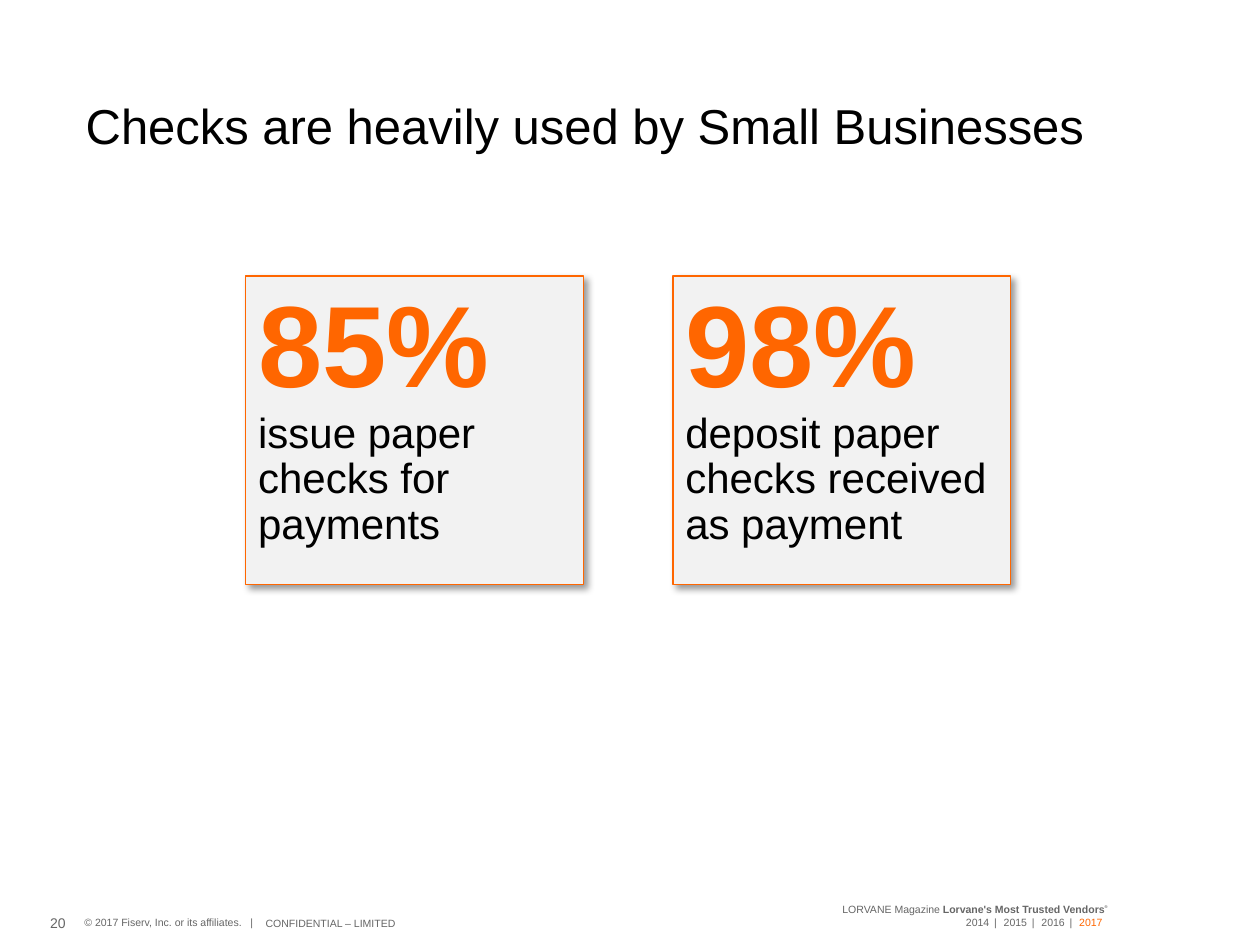
from dataclasses import dataclass

from lxml import etree
from pptx import Presentation
from pptx.dml.color import RGBColor
from pptx.enum.shapes import MSO_SHAPE
from pptx.enum.text import MSO_ANCHOR, PP_ALIGN
from pptx.oxml.ns import qn
from pptx.util import Inches, Pt

RECT = MSO_SHAPE.RECTANGLE
TOP, MID, LOW = MSO_ANCHOR.TOP, MSO_ANCHOR.MIDDLE, MSO_ANCHOR.BOTTOM
LEFT, RIGHT = PP_ALIGN.LEFT, PP_ALIGN.RIGHT
COLS, ROWS = 100, 75


@dataclass(frozen=True)
class Theme:
    font: str = "Arial"
    ink: str = "000000"
    grey: str = "666666"
    accent: str = "FF6600"
    panel: str = "F2F2F2"
    title: int = 28
    stat: int = 66
    body: int = 24
    page: int = 8
    note: int = 6
    mark: int = 4


def write(par, text, font="Arial", size=6, color="666666", bold=False,
          gap=0, lift=0):
    """Add a run; gap is letter spacing in points, lift a baseline percent."""
    run = par.add_run()
    run.text = text
    style = run.font
    style.name, style.size, style.bold = font, Pt(size), bold
    style.color.rgb = RGBColor.from_string(color)
    props = run._r.get_or_add_rPr()
    if gap:
        props.set("spc", str(round(gap * 100)))
    if lift:
        props.set("baseline", str(lift * 1000))


class Page:
    def __init__(self, deck, theme):
        self.theme = theme
        self.wide, self.high = deck.slide_width, deck.slide_height
        self.slide = deck.slides.add_slide(deck.slide_layouts[5])

    def place(self, col, row, cols, rows):
        x, y = self.wide / COLS, self.high / ROWS
        return [round(n) for n in (col * x, row * y, cols * x, rows * y)]

    def frame(self, shape, anchor=TOP, align=LEFT, lead=None,
              pad=(0.1, 0.05)):
        """Set up the shape's text and return its first paragraph."""
        body = shape.text_frame
        body.word_wrap, body.vertical_anchor = True, anchor
        side, edge = map(Inches, pad)
        body.margin_left = body.margin_right = side
        body.margin_top = body.margin_bottom = edge
        par = body.paragraphs[0]
        par.alignment, par.line_spacing = align, lead
        return par

    def title(self, text, *box):
        shape = self.slide.shapes.title
        shape.left, shape.top, shape.width, shape.height = self.place(*box)
        par = self.frame(shape, LOW, lead=0.9)
        write(par, text, self.theme.font, self.theme.title, self.theme.ink)

    def label(self, *box, **form):
        shape = self.slide.shapes.add_textbox(*self.place(*box))
        return self.frame(shape, **form)

    def shade(self, shape):
        shape.shadow.inherit = False
        effect = shape._element.spPr.find(qn("a:effectLst"))
        outer = etree.SubElement(
            effect, qn("a:outerShdw"), blurRad=str(Pt(4)), dist=str(Pt(3)),
            dir=str(45 * 60000), algn="tl", rotWithShape="0")
        tint = etree.SubElement(outer, qn("a:srgbClr"), val=self.theme.ink)
        etree.SubElement(tint, qn("a:alpha"), val="40000")

    def card(self, stat, text, *box):
        look = self.theme
        shape = self.slide.shapes.add_shape(RECT, *self.place(*box))
        shape.fill.solid()
        shape.fill.fore_color.rgb = RGBColor.from_string(look.panel)
        shape.line.color.rgb = RGBColor.from_string(look.accent)
        shape.line.width = Pt(0.75)
        self.shade(shape)
        par = self.frame(shape, lead=0.9, pad=(0.1, 0.09))
        write(par, stat + " ", look.font, look.stat, look.accent, bold=True)
        write(par, text, look.font, look.body, look.ink)

    def footer(self):
        look = self.theme
        par = self.label(6, 72.5, 17, 1.6, lead=0.9, pad=(0.07, 0.03))
        write(par, "© 2017 Fiserv, Inc. or its affiliates.")
        write(par, " ", gap=3.3)
        write(par, "|")
        write(self.label(20.1, 72.3, 15.2, 2), "CONFIDENTIAL – LIMITED")
        num = self.label(0, 71.7, 6.2, 3.1, anchor=MID, align=RIGHT)
        write(num, "20", size=look.page)

        award = self.label(62.9, 71.1, 26.2, 3.3, align=RIGHT, lead=Pt(7.5),
                           pad=(0.12, 0.05))
        write(award, "LORVANE Magazine ")
        write(award, "Lorvane's Most Trusted Vendors", bold=True)
        write(award, "®", size=look.mark, bold=True, lift=60)
        years = self.label(62.9, 72.14, 26.2, 2.3, align=RIGHT,
                           lead=Pt(7.5), pad=(0.16, 0.05))
        for year in ("2014", "2015", "2016"):
            write(years, year)
            write(years, " | ", gap=1.1)
        write(years, "2017", color=look.accent)


def main():
    deck = Presentation()
    deck.slide_width, deck.slide_height = Inches(10), Inches(7.5)
    page = Page(deck, Theme())
    page.title("Checks are heavily used by Small Businesses",
               5.8, 3.3, 94.2, 9.5)
    stats = (("85%", "issue paper checks for payments"),
             ("98%", "deposit paper checks received as payment"))
    for i, (stat, text) in enumerate(stats):
        page.card(stat, text, 19.5 + 33.9 * i, 21.9, 26.8, 24.5)
    page.footer()
    deck.save("out.pptx")


if __name__ == "__main__":
    main()
